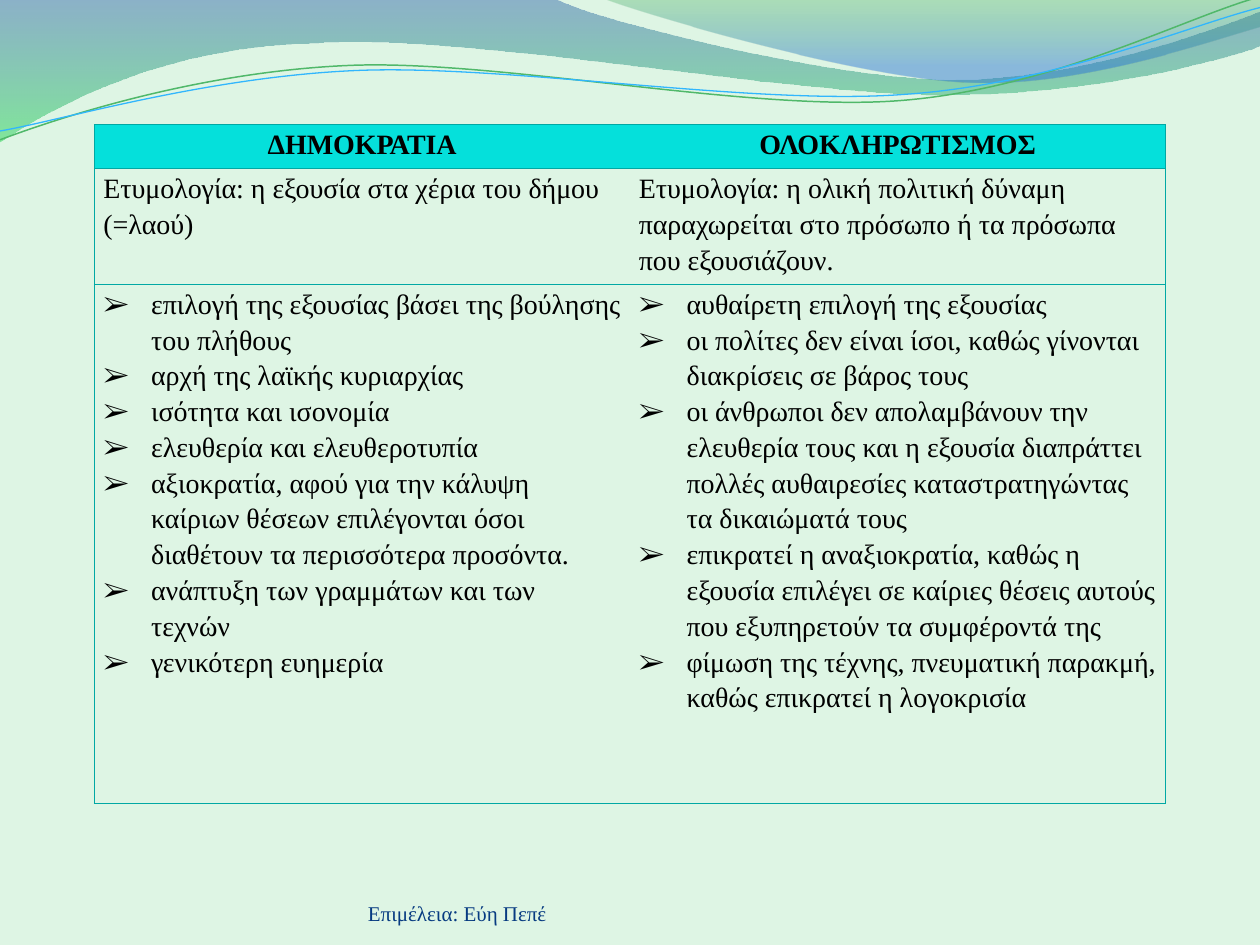
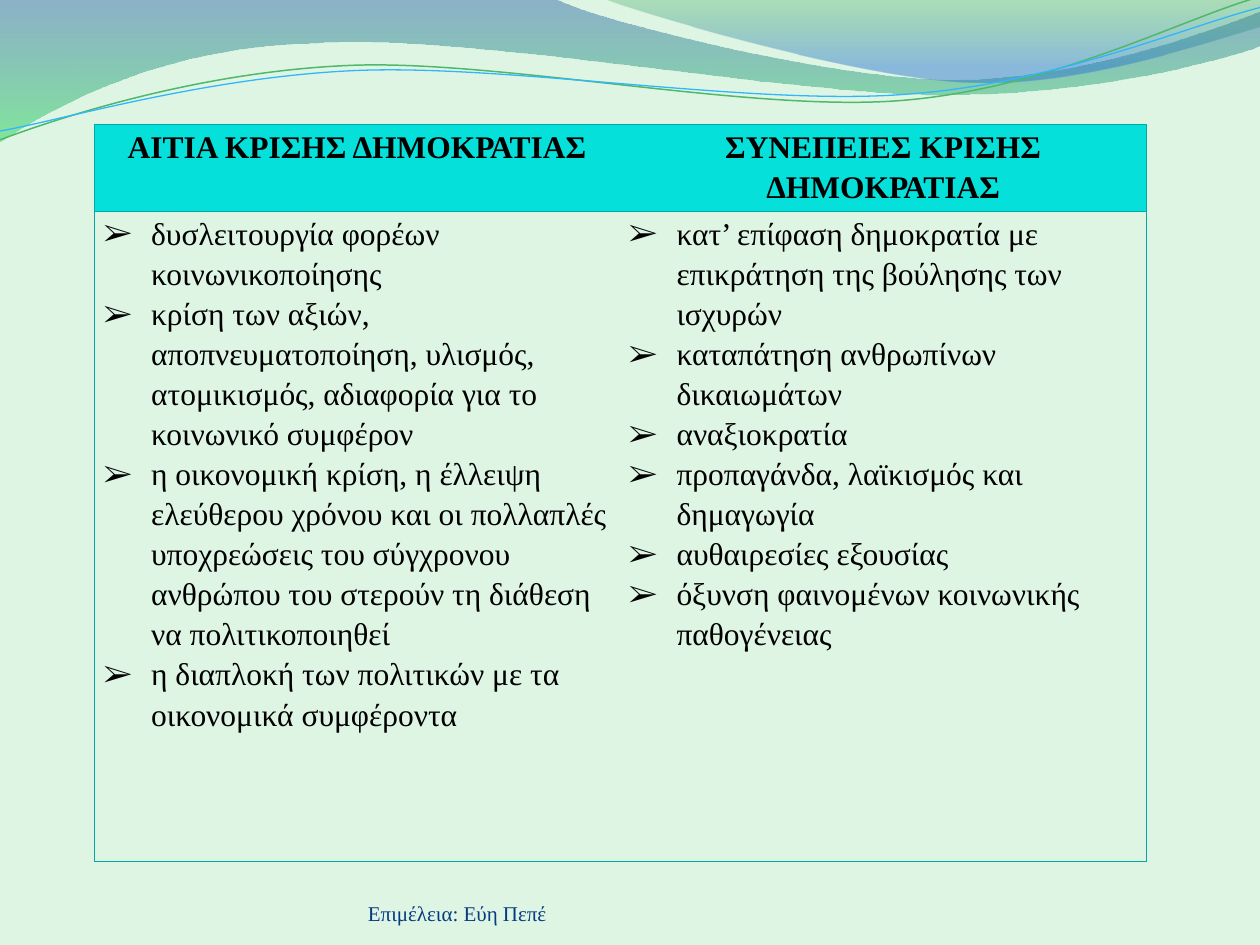
from lxml.etree import SubElement
from pptx import Presentation
from pptx.dml.color import RGBColor
from pptx.enum.text import MSO_ANCHOR, PP_ALIGN
from pptx.oxml import parse_xml
from pptx.oxml.ns import nsdecls, qn
from pptx.util import Inches, Pt

FONT = "Times New Roman"
PALE = RGBColor(0xDE, 0xF5, 0xE4)
TEAL = RGBColor(0x05, 0xE0, 0xDB)
BORDER = RGBColor(0x01, 0xA8, 0xA4)
NAVY = RGBColor(0x07, 0x3B, 0x81)
BLACK = RGBColor(0, 0, 0)
SKY = RGBColor(0x31, 0xB6, 0xFD)
LEAF = RGBColor(0x50, 0xB8, 0x6A)
DEEP_BLUE = RGBColor(0x29, 0x60, 0xA7)
BRIGHT_GREEN = RGBColor(0x35, 0xDA, 0x5E)
GREEN = RGBColor(0x36, 0xA7, 0x52)
BLUE = RGBColor(0x24, 0x72, 0xD3)
FOOTER = "Επιμέλεια: Εύη Πεπέ"
NO_STYLE = "{2D5ABB26-0587-4C30-8999-92F81FD0307C}"

# Outlines in inches: a pair is a straight step, six numbers are a Bézier curve
# Bands: outline, gradient stops as (position, colour, opacity %)
BANDS = [
    ([(0, 0), (4.4, -0.01), (4.76, 0.17, 6.64, 0.63, 7.58, 0.63),
      (8.53, 0.63, 9.58, 0.26, 10, 0.09), (10.01, 0.36),
      (9.83, 0.44, 8.7, 0.76, 7.46, 0.75), (6.22, 0.75, 3.82, 0.28, 2.57, 0.34),
      (1.29, 0.36, 0.46, 0.83, -0.01, 1.13), (0, 0)],
     [(0, DEEP_BLUE, 45), (1, BRIGHT_GREEN, 55)]),
    ([(4.79, -0.01), (5.09, 0.11, 6.82, 0.62, 7.69, 0.65),
      (8.56, 0.69, 9.61, 0.32, 10, 0.21), (10, 0), (4.79, -0.01)],
     [(0, GREEN, 30), (0.8, BLUE, 45)]),
]
# Waves: outline, colour, width
WAVES = [
    ([(0, 1.11), (0.48, 0.93, 1.58, 0.57, 2.77, 0.52),
      (3.95, 0.47, 5.93, 0.89, 7.13, 0.8), (8.33, 0.71, 9.38, 0.15, 9.98, -0.02)],
     LEAF, 0.85),
    ([(0, 1.04), (0.47, 0.96, 1.64, 0.61, 2.83, 0.56),
      (4.03, 0.51, 5.97, 0.84, 7.17, 0.75), (8.36, 0.67, 9.41, 0.21, 10, 0.06)],
     SKY, 0.75),
]

# Each table: text size, height, column widths, row heights, rows; a list is bulleted
TABLES = [
    (16, 5.37, [4.25, 4.25], [0.35, 0.73, 4.12], [
        ["ΔΗΜΟΚΡΑΤΙΑ", "ΟΛΟΚΛΗΡΩΤΙΣΜΟΣ"],
        ["Ετυμολογία: η εξουσία στα χέρια του δήμου (=λαού)",
         "Ετυμολογία: η ολική πολιτική δύναμη παραχωρείται στο πρόσωπο ή τα "
         "πρόσωπα που εξουσιάζουν."],
        [["επιλογή της εξουσίας βάσει της βούλησης του πλήθους",
          "αρχή της λαϊκής κυριαρχίας",
          "ισότητα και ισονομία",
          "ελευθερία και ελευθεροτυπία",
          "αξιοκρατία, αφού για την κάλυψη καίριων θέσεων επιλέγονται όσοι "
          "διαθέτουν τα περισσότερα προσόντα.",
          "ανάπτυξη των γραμμάτων και των τεχνών",
          "γενικότερη ευημερία"],
         ["αυθαίρετη επιλογή της εξουσίας",
          "οι πολίτες δεν είναι ίσοι, καθώς γίνονται διακρίσεις σε βάρος τους",
          "οι άνθρωποι δεν απολαμβάνουν την ελευθερία τους και η εξουσία "
          "διαπράττει πολλές αυθαιρεσίες καταστρατηγώντας τα δικαιώματά τους",
          "επικρατεί η αναξιοκρατία, καθώς η εξουσία επιλέγει σε καίριες θέσεις "
          "αυτούς που εξυπηρετούν τα συμφέροντά της",
          "φίμωση της τέχνης, πνευματική παρακμή, καθώς επικρατεί η λογοκρισία"]],
    ]),
    (18, 5.82, [4.17, 4.18], [0.44, 5.16], [
        ["ΑΙΤΙΑ ΚΡΙΣΗΣ ΔΗΜΟΚΡΑΤΙΑΣ", "ΣΥΝΕΠΕΙΕΣ ΚΡΙΣΗΣ ΔΗΜΟΚΡΑΤΙΑΣ"],
        [["δυσλειτουργία φορέων κοινωνικοποίησης",
          "κρίση των αξιών, αποπνευματοποίηση, υλισμός, ατομικισμός, αδιαφορία "
          "για το κοινωνικό συμφέρον",
          "η οικονομική κρίση, η έλλειψη ελεύθερου χρόνου και οι πολλαπλές "
          "υποχρεώσεις του σύγχρονου ανθρώπου του στερούν τη διάθεση να "
          "πολιτικοποιηθεί",
          "η διαπλοκή των πολιτικών με τα οικονομικά συμφέροντα"],
         ["κατ’ επίφαση δημοκρατία με επικράτηση της βούλησης των ισχυρών",
          "καταπάτηση ανθρωπίνων δικαιωμάτων",
          "αναξιοκρατία",
          "προπαγάνδα, λαϊκισμός και δημαγωγία",
          "αυθαιρεσίες εξουσίας",
          "όξυνση φαινομένων κοινωνικής παθογένειας"]],
    ]),
]


def add_outline(slide, steps, close):
    """Draw a freeform through the end points, then bend its curved steps."""
    points = [(Inches(step[-2]), Inches(step[-1])) for step in steps]
    builder = slide.shapes.build_freeform(*points[0], scale=1.0)
    builder.add_line_segments(points[1:], close=close)
    sp = builder.convert_to_shape()
    sp.shadow.inherit = False
    lines = sp._element.spPr.findall(".//" + qn("a:lnTo"))
    for line, step in zip(lines, steps[1:]):
        if len(step) == 6:
            curve = parse_xml(f'<a:cubicBezTo {nsdecls("a")}/>')
            for x, y in zip(step[::2], step[1::2]):
                SubElement(curve, qn("a:pt"), x=str(Inches(x) - sp.left),
                           y=str(Inches(y) - sp.top))
            line.getparent().replace(line, curve)
    return sp


def add_run(p, text, size, color, bold=False):
    r = p.add_run()
    r.text = text
    r.font.name = FONT
    r.font.size = Pt(size)
    r.font.bold = bold
    r.font.color.rgb = color


prs = Presentation()
prs.slide_width, prs.slide_height = Inches(10), Inches(7.5)

for size, table_height, widths, heights, rows in TABLES:
    s = prs.slides.add_slide(prs.slide_layouts[6])
    s.background.fill.solid()
    s.background.fill.fore_color.rgb = PALE

    # Gradient bands along the top
    for steps, stops in BANDS:
        sp = add_outline(s, steps, True)
        sp.line.fill.background()
        sp.fill.gradient()
        sp.fill.gradient_angle = 270
        for stop, (position, color, _) in zip(sp.fill.gradient_stops, stops):
            stop.position = position
            stop.color.rgb = color
        clrs = sp._element.spPr.findall(".//" + qn("a:srgbClr"))
        for clr, (_, _, opacity) in zip(clrs, stops):
            SubElement(clr, qn("a:alpha"), val=str(opacity * 1000))

    # Thin waves
    for steps, color, width in WAVES:
        sp = add_outline(s, steps, False)
        sp.fill.background()
        sp.line.color.rgb = color
        sp.line.width = Pt(width)

    # Footer
    tf = s.shapes.add_textbox(Inches(2.92), Inches(6.95), Inches(3.67), Inches(0.4)).text_frame
    tf.word_wrap = True
    tf.vertical_anchor = MSO_ANCHOR.BOTTOM
    tf.margin_left = tf.margin_right = tf.margin_top = tf.margin_bottom = 0
    add_run(tf.paragraphs[0], FOOTER, 12, NAVY)

    # Table
    frame = s.shapes.add_table(len(rows), len(widths), Inches(0.75), Inches(0.99),
                               Inches(sum(widths)), Inches(table_height))
    table = frame.table
    table.horz_banding = False
    table._tbl.tblPr.find(qn("a:tableStyleId")).text = NO_STYLE
    for column, width in zip(table.columns, widths):
        column.width = Inches(width)
    for row, height in zip(table.rows, heights):
        row.height = Inches(height)
    frame.height = Inches(table_height)

    for i, row in enumerate(rows):
        for j, content in enumerate(row):
            cell = table.cell(i, j)
            cell.margin_left = cell.margin_right = Inches(0.07)
            cell.margin_top = cell.margin_bottom = 0
            header = i == 0
            if header:
                cell.fill.solid()
                cell.fill.fore_color.rgb = TEAL
            else:
                cell.fill.background()

            # Outer frame and rules between rows
            sides = ["lnL" if j == 0 else "lnR"]
            sides += ["lnT"] if i < 2 else []
            sides += [] if header else ["lnB"]
            for k, side in enumerate(sides):
                cell._tc.tcPr.insert(k, parse_xml(
                    f'<a:{side} {nsdecls("a")} w="{Pt(0.75)}"><a:solidFill>'
                    f'<a:srgbClr val="{BORDER}"/></a:solidFill></a:{side}>'))

            # Cell text
            bulleted = isinstance(content, list)
            tf = cell.text_frame
            for k, text in enumerate(content if bulleted else [content]):
                p = tf.add_paragraph() if k else tf.paragraphs[0]
                p.line_spacing = 1.15
                p.alignment = PP_ALIGN.CENTER if header else PP_ALIGN.LEFT
                if bulleted:
                    pPr = p._p.get_or_add_pPr()
                    pPr.set("marL", str(Inches(0.38)))
                    pPr.set("indent", str(-Inches(0.38)))
                    SubElement(pPr, qn("a:buFont"), typeface=FONT)
                    SubElement(pPr, qn("a:buChar"), char="➢")
                add_run(p, text, size, BLACK, header)

prs.save("out.pptx")
